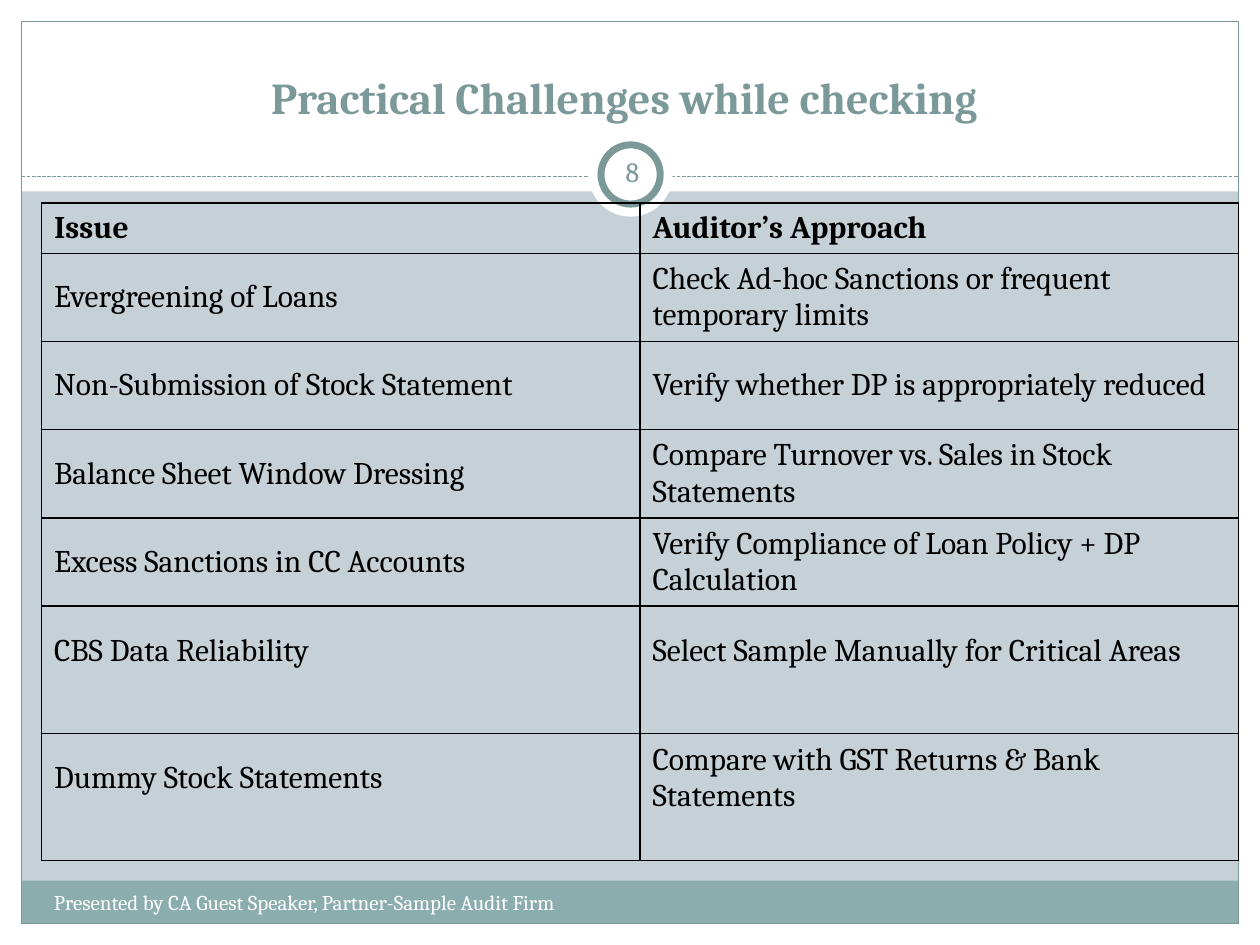
from lxml.etree import SubElement
from pptx import Presentation
from pptx.dml.color import RGBColor
from pptx.enum.dml import MSO_LINE
from pptx.enum.shapes import MSO_CONNECTOR, MSO_SHAPE
from pptx.enum.text import MSO_ANCHOR, PP_ALIGN
from pptx.oxml.ns import qn
from pptx.util import Inches, Pt

COLS, ROWS = 1000, 750
CELL = Inches(10) // COLS
FONT = "Cambria"
WHITE = RGBColor(0xFF, 0xFF, 0xFF)
BLACK = RGBColor(0, 0, 0)
PALE = RGBColor(0xC5, 0xD1, 0xD7)
TEAL = RGBColor(0x8C, 0xAD, 0xAE)
SLATE = RGBColor(0x7C, 0x99, 0x9A)

ISSUES = [
    ("Issue", "Auditor’s Approach"),
    ("Evergreening of Loans", "Check Ad-hoc Sanctions or frequent temporary limits"),
    ("Non-Submission of Stock Statement", "Verify whether DP is appropriately reduced"),
    ("Balance Sheet Window Dressing", "Compare Turnover vs. Sales in Stock Statements"),
    ("Excess Sanctions in CC Accounts", "Verify Compliance of Loan Policy + DP Calculation"),
    ("CBS Data Reliability", "Select Sample Manually for Critical Areas"),
    ("Dummy Stock Statements", "Compare with GST Returns & Bank Statements"),
]
ROW_HEIGHTS = [40] + [70] * 4 + [101] * 2
TALL = 101


def grid(*cells):
    """Convert grid cells to slide lengths."""
    return [c * CELL for c in cells]


def add_block(s, box, fill=None, line=None, width=0.75, kind=MSO_SHAPE.RECTANGLE):
    """Place a plain shape in the box."""
    sp = s.shapes.add_shape(kind, *grid(*box))
    sp.shadow.inherit = False
    if fill is None:
        sp.fill.background()
    else:
        sp.fill.solid()
        sp.fill.fore_color.rgb = fill
    if line is None:
        sp.line.fill.background()
    else:
        sp.line.color.rgb = line
        sp.line.width = Pt(width)


def style_text(tf, size, color, bold=False, align=PP_ALIGN.LEFT):
    """Format every paragraph of a text frame."""
    for p in tf.paragraphs:
        p.alignment = align
        for r in p.runs:
            r.font.name, r.font.size, r.font.bold = FONT, Pt(size), bold
            r.font.color.rgb = color


def add_text(s, box, text, size, color, bold=False, align=PP_ALIGN.LEFT,
             anchor=MSO_ANCHOR.TOP, margins=(10, 5, 10, 5)):
    """Place a wrapped text box in the box."""
    tf = s.shapes.add_textbox(*grid(*box)).text_frame
    tf.word_wrap = True
    tf.vertical_anchor = anchor
    tf.margin_left, tf.margin_top, tf.margin_right, tf.margin_bottom = grid(*margins)
    tf.text = text
    style_text(tf, size, color, bold, align)


def add_frame(s, box):
    """Draw the white margins, footer band, outline and dashed rule."""
    x, y, w, h = box
    right, bottom, rule = x + w, y + h, 140
    add_block(s, (0, bottom, COLS, ROWS - bottom), WHITE)
    add_block(s, (0, 0, COLS, 152), WHITE)
    for left in (0, right):
        add_block(s, (left, 0, x, ROWS), WHITE)
    add_block(s, (x, bottom - 34, w, 34), TEAL)
    add_block(s, box, line=SLATE)
    ln = s.shapes.add_connector(MSO_CONNECTOR.STRAIGHT, *grid(x, rule, right, rule))
    ln.line.color.rgb = SLATE
    ln.line.width = Pt(0.75)
    ln.line.dash_style = MSO_LINE.SQUARE_DOT
    SubElement(ln._element.spPr, qn("a:effectLst"))


def add_badge(s, box, number):
    """Draw the ringed slide number."""
    x, y, w, h = box
    inset = 10
    ring = (x + inset, y + inset, w - 2 * inset, h - 2 * inset)
    add_block(s, box, WHITE, kind=MSO_SHAPE.OVAL)
    add_block(s, ring, WHITE, SLATE, 4, MSO_SHAPE.OVAL)
    add_text(s, (x + inset, y + 7, 50, 48), number, 16, SLATE, align=PP_ALIGN.CENTER,
             anchor=MSO_ANCHOR.MIDDLE, margins=(5, 5, 5, 5))


def add_borders(cell):
    """Give a cell thin black edges."""
    tc_pr = cell._tc.get_or_add_tcPr()
    for edge in ("a:lnL", "a:lnR", "a:lnT", "a:lnB"):
        ln = SubElement(tc_pr, qn(edge), w=str(Pt(1)))
        SubElement(SubElement(ln, qn("a:solidFill")), qn("a:srgbClr"), val=str(BLACK))


def add_issues(s, box):
    """Fill the box with the table of issues and approaches."""
    tbl = s.shapes.add_table(len(ISSUES), 2, *grid(*box)).table
    tbl.first_row = tbl.horz_banding = False
    for col in tbl.columns:
        col.width = box[2] // 2 * CELL
    for i, (row, height, texts) in enumerate(zip(tbl.rows, ROW_HEIGHTS, ISSUES)):
        row.height = height * CELL
        for cell, text in zip(row.cells, texts):
            add_borders(cell)
            cell.fill.background()
            cell.vertical_anchor = MSO_ANCHOR.MIDDLE
            if height == TALL:
                cell.margin_bottom = 35 * CELL
            cell.text_frame.text = text
            style_text(cell.text_frame, 18, BLACK, bold=i == 0)


def main():
    """Build and save the slide."""
    prs = Presentation()
    prs.slide_width, prs.slide_height = grid(COLS, ROWS)
    s = prs.slides.add_slide(prs.slide_layouts[6])
    s.background.fill.solid()
    s.background.fill.fore_color.rgb = PALE
    add_frame(s, (17, 17, 966, 716))
    add_badge(s, (467, 105, 67, 67), "8")
    add_text(s, (33, 50, 933, 93), "Practical Challenges while checking", 25.2, SLATE,
             True, PP_ALIGN.CENTER, margins=(10, 6, 18, 5))
    add_text(s, (33, 701, 525, 40),
             "Presented by CA Guest Speaker, Partner-Sample Audit Firm", 12, WHITE)
    add_issues(s, (33, 161, 950, sum(ROW_HEIGHTS)))
    prs.save("out.pptx")


if __name__ == "__main__":
    main()
